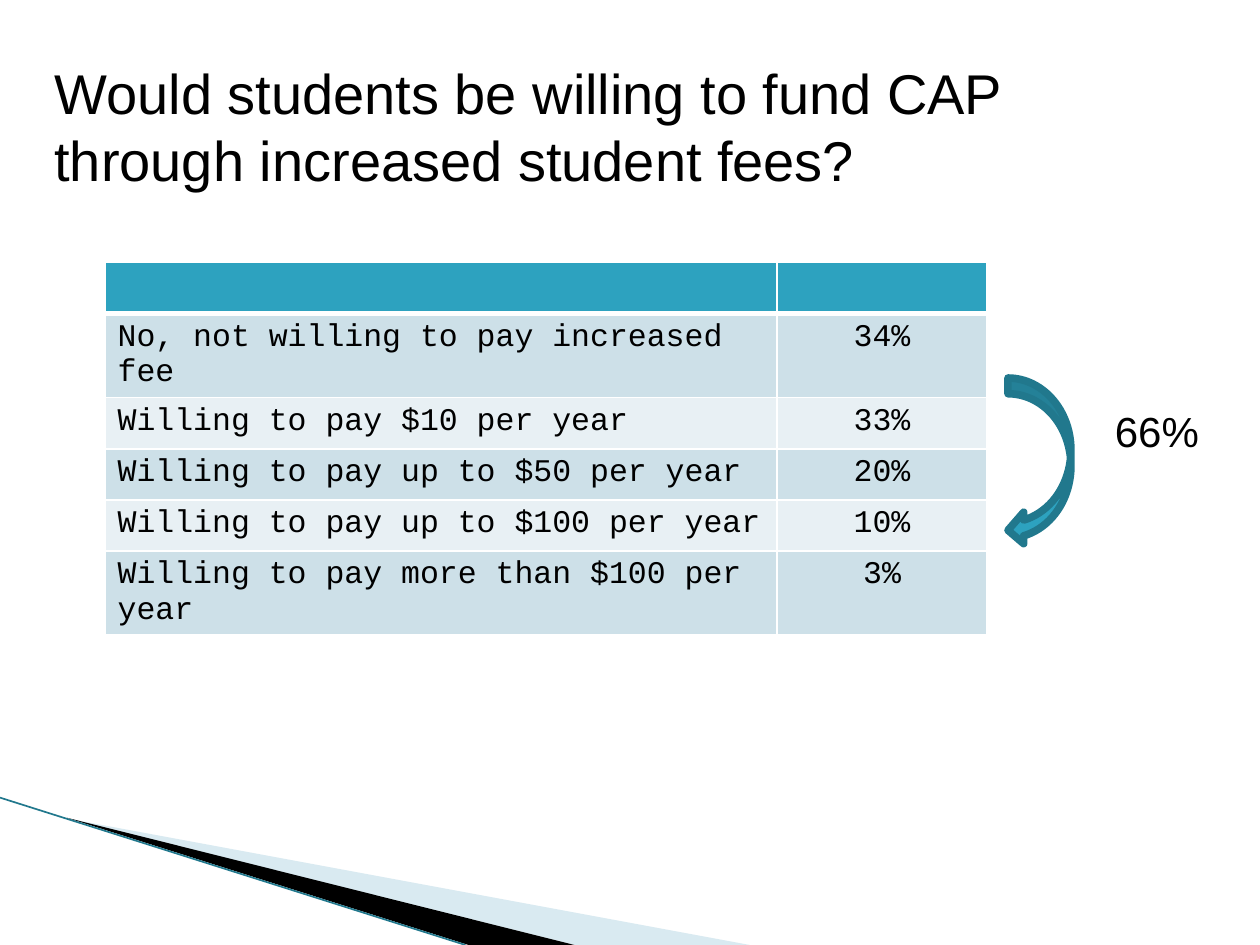
"""Build the survey slide on funding CAP through student fees."""
from lxml.etree import SubElement
from pptx import Presentation
from pptx.dml.color import RGBColor
from pptx.enum.shapes import MSO_CONNECTOR as Connector, MSO_SHAPE as Shape
from pptx.enum.text import PP_ALIGN as Align
from pptx.oxml.ns import qn
from pptx.util import Pt

COLORS = {
    "text": "000000", "border": "FFFFFF", "header": "2DA2BF",
    "odd": "CDE0E8", "even": "E8F0F4", "outline": "21788D", "pale": "A0CBDC",
}


def paint(fill, name):
    fill.solid()
    fill.fore_color.rgb = RGBColor.from_string(COLORS[name])


def add_text(slide, text, left, top, width, height, size):
    box = slide.shapes.add_textbox(Pt(left), Pt(top), Pt(width), Pt(height))
    box.text_frame.word_wrap = True
    paragraph = box.text_frame.paragraphs[0]
    paragraph.text = text
    paragraph.font.name = "Arial"
    paragraph.font.size = Pt(size)
    paint(paragraph.font.fill, "text")


presentation = Presentation()
presentation.slide_width, presentation.slide_height = Pt(720), Pt(540)
slide = presentation.slides.add_slide(presentation.slide_layouts[6])

wedges = [
    ("pale", 40, [(39.6, 468), (428.4, 540), (328.3, 540)]),
    ("text", 100, [(38.2, 467.3), (328.3, 540), (267.8, 540)]),
]
for color, opacity, points in wedges:
    start, *others = [(Pt(x), Pt(y)) for x, y in points]
    builder = slide.shapes.build_freeform(*start)
    builder.add_line_segments(others)
    wedge = builder.convert_to_shape()
    wedge.shadow.inherit = False
    wedge.line.fill.background()
    paint(wedge.fill, color)
    if opacity < 100:
        tint = next(wedge.element.spPr.iter(qn("a:srgbClr")))
        SubElement(tint, qn("a:alpha"), val=str(opacity * 1000))

edge = slide.shapes.add_connector(Connector.STRAIGHT, Pt(0), Pt(455.8), Pt(266), Pt(540))
SubElement(edge.element.spPr, qn("a:effectLst"))
edge.line.width = Pt(0.95)
paint(edge.line.fill, "outline")

answers = [
    ("", ""),
    ("No, not willing to pay increased fee", "34%"),
    ("Willing to pay $10 per year", "33%"),
    ("Willing to pay up to $50 per year", "20%"),
    ("Willing to pay up to $100 per year", "10%"),
    ("Willing to pay more than $100 per year", "3%"),
]
table = slide.shapes.add_table(len(answers), 2, Pt(60), Pt(150), Pt(504), Pt(175.2)).table
for column, width in zip(table.columns, (384, 120)):
    column.width = Pt(width)
for row, answer in enumerate(answers):
    table.rows[row].height = Pt(29.2)
    for column, text in enumerate(answer):
        cell = table.cell(row, column)
        properties = cell._tc.get_or_add_tcPr()
        for side in ("L", "R", "T", "B"):
            thick = (row, side) in ((0, "B"), (1, "T"))
            border = SubElement(properties, qn(f"a:ln{side}"), w=str(Pt(3 if thick else 1)))
            solid = SubElement(border, qn("a:solidFill"))
            SubElement(solid, qn("a:srgbClr"), val=COLORS["border"])
        paint(cell.fill, "header" if row == 0 else "odd" if row % 2 else "even")
        paragraph = cell.text_frame.paragraphs[0]
        paragraph.text = text
        paragraph.alignment = Align.CENTER if column else Align.LEFT
        paragraph.font.name = "Courier New"
        paragraph.font.size = Pt(18)
        paragraph.font.bold = False
        paint(paragraph.font.fill, "text")

add_text(slide, "Would students be willing to fund CAP through increased student fees?",
         24, 30, 660, 85, 32)

arrow = slide.shapes.add_shape(Shape.CURVED_LEFT_ARROW, Pt(576), Pt(216), Pt(36), Pt(96))
arrow.shadow.inherit = False
paint(arrow.fill, "header")
paint(arrow.line.fill, "outline")
arrow.line.width = Pt(4.33)

add_text(slide, "66%", 630, 228, 66, 36, 24)

presentation.save("out.pptx")
